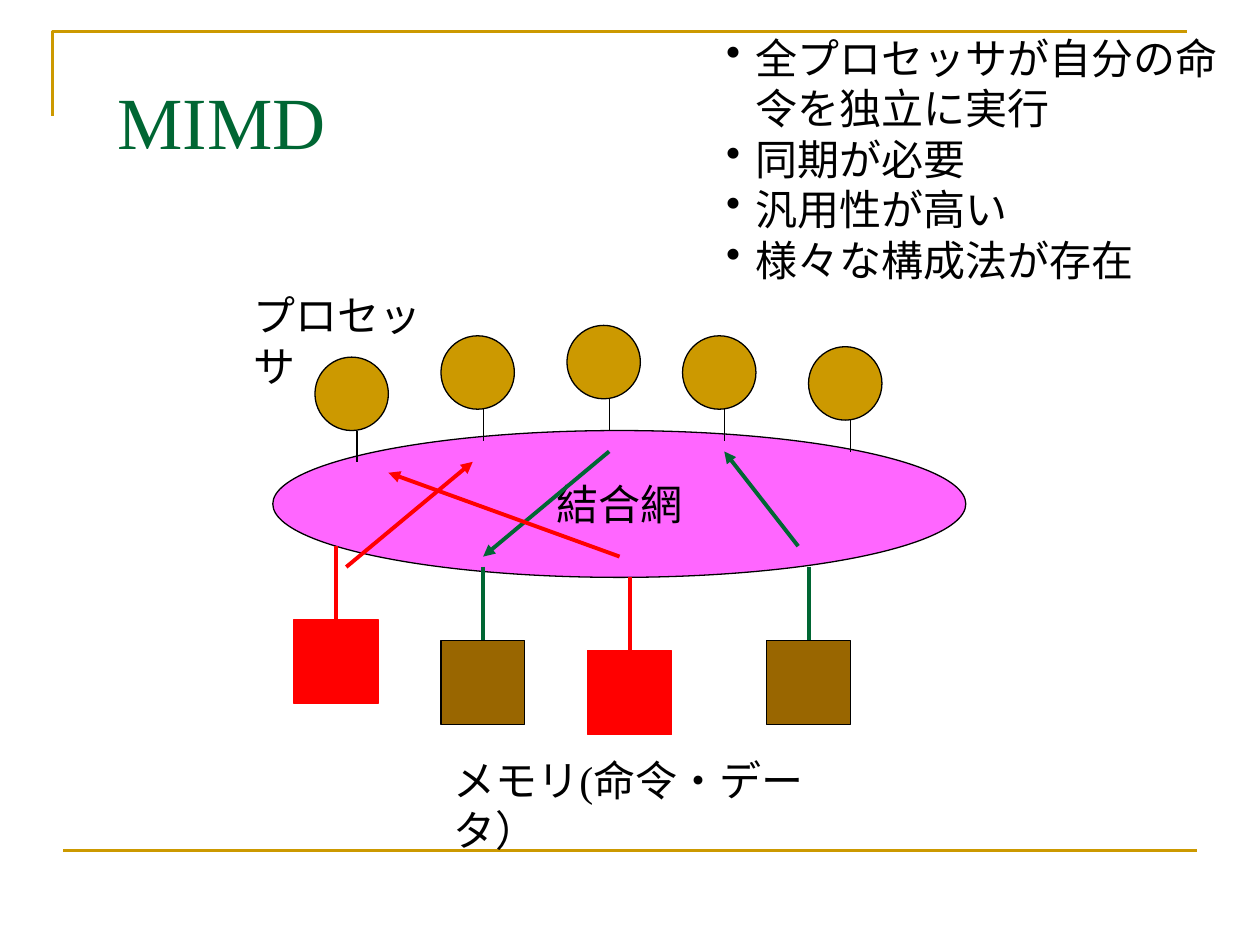
from pptx import Presentation
from pptx.dml.color import RGBColor
from pptx.enum.shapes import MSO_CONNECTOR, MSO_SHAPE
from pptx.enum.text import MSO_ANCHOR, PP_ALIGN
from pptx.oxml.ns import qn
from pptx.util import Cm, Pt

LINE = MSO_CONNECTOR.STRAIGHT
CIRCLE, SQUARE = MSO_SHAPE.OVAL, MSO_SHAPE.RECTANGLE
FONT = "Times New Roman"
BLACK, GOLD, GREEN = "000000", "CC9900", "006633"
RED, BROWN, PINK = "FF0000", "996600", "FF66FF"

# Content: text, then box as left, top, width, height (all lengths in cm)
TITLE = ("MIMD", (2.12, 1.24, 22.86, 3.18))
LABELS = [
    ("プロセッサ", (4.87, 5.72, 4.23, 1.27)),
    ("メモリ(命令・データ）", (8.89, 15.08, 7.62, 1.27)),
]
FEATURES = [
    "全プロセッサが自分の命令を独立に実行",
    "同期が必要",
    "汎用性が高い",
    "様々な構成法が存在",
]
FEATURES_BOX = (14.39, 0.53, 11.01, 6.35)
BULLET_INDENT = 0.6

NETWORK = ("結合網", (5.5, 8.68, 13.97, 2.96))

# Processors hang a stem down, memories raise one up: left, top
PROCESSORS = [(6.35, 7.2), (8.89, 6.77), (11.43, 6.56), (13.76, 6.77), (16.3, 6.99)]
PROCESSOR_SIZE, PROCESSOR_STEM = 1.48, 0.64
MEMORIES = [
    (5.93, 12.49, RED, RED, RED),  # fill, outline, stem
    (8.89, 12.91, BROWN, BLACK, GREEN),
    (11.85, 13.12, RED, RED, RED),
    (15.45, 12.91, BROWN, BLACK, GREEN),
]
MEMORY_SIZE, MEMORY_STEM = 1.69, 1.49
STEM_OFFSET = 0.85

TRANSFERS = [
    ((6.98, 11.43), (9.53, 9.31), RED),
    ((16.09, 11.01), (14.6, 9.1), GREEN),
    ((12.28, 9.1), (9.74, 11.22), GREEN),
    ((12.49, 11.22), (7.83, 9.53), RED),
]
CORNER = [(1.06, 2.33), (1.06, 0.64), (23.92, 0.64)]
FOOT_RULE = ((1.27, 17.15), (23.13 + 1, 17.15))

prs = Presentation()
prs.slide_width, prs.slide_height = Cm(25.4), Cm(19.05)
slide = prs.slides.add_slide(prs.slide_layouts[6])
shapes = slide.shapes


def rgb(color):
    return RGBColor.from_string(color)


def set_line(part, color, width):
    part.line.color.rgb = rgb(color)
    part.line.width = Pt(width)


def set_font(paragraph, size=24, color=BLACK):
    paragraph.font.name = FONT
    paragraph.font.size = Pt(size)
    paragraph.font.color.rgb = rgb(color)


def add_text(lines, box, size=24, color=BLACK):
    frame = shapes.add_textbox(*map(Cm, box)).text_frame
    frame.word_wrap = True
    frame.text = "\n".join(lines)
    for paragraph in frame.paragraphs:
        set_font(paragraph, size, color)
    return frame


def add_node(kind, box, fill, outline=BLACK):
    node = shapes.add_shape(kind, *map(Cm, box))
    node.shadow.inherit = False
    node.fill.solid()
    node.fill.fore_color.rgb = rgb(fill)
    set_line(node, outline, 0.75)
    return node


def add_line(start, end, color, width, arrow=False):
    line = shapes.add_connector(LINE, *map(Cm, start + end))
    set_line(line, color, width)
    properties = line._element.spPr
    if arrow:
        head = line.line._get_or_add_ln().makeelement(qn("a:tailEnd"), {"type": "triangle"})
        line.line._get_or_add_ln().append(head)
    properties.append(properties.makeelement(qn("a:effectLst"), {}))


# Frame lines
points = [(Cm(x), Cm(y)) for x, y in CORNER]
builder = shapes.build_freeform(*points[0])
builder.add_line_segments(points[1:], close=False)
corner = builder.convert_to_shape()
corner.shadow.inherit = False
corner.fill.background()
set_line(corner, GOLD, 1.5)
add_line(*FOOT_RULE, GOLD, 1.5)

# Title, labels and feature list
title = add_text([TITLE[0]], TITLE[1], 42, GREEN)
title.margin_top = Cm(0.3)
for label, box in LABELS:
    add_text([label], box)
for paragraph in add_text(FEATURES, FEATURES_BOX).paragraphs:
    properties = paragraph._p.get_or_add_pPr()
    properties.set("marL", str(Cm(BULLET_INDENT)))
    properties.set("indent", str(-Cm(BULLET_INDENT)))
    bullet = properties.makeelement(qn("a:buChar"), {"char": "•"})
    properties.append(bullet)

# Interconnection network
network = add_node(CIRCLE, NETWORK[1], PINK).text_frame
network.text = NETWORK[0]
network.word_wrap = False
network.vertical_anchor = MSO_ANCHOR.MIDDLE
network.paragraphs[0].alignment = PP_ALIGN.CENTER
set_font(network.paragraphs[0])

# Processors above, memories below
for left, top in PROCESSORS:
    add_node(CIRCLE, (left, top, PROCESSOR_SIZE, PROCESSOR_SIZE), GOLD)
    x, bottom = left + STEM_OFFSET, top + PROCESSOR_SIZE
    add_line((x, bottom), (x, bottom + PROCESSOR_STEM), BLACK, 0.75)
for left, top, fill, outline, stem in MEMORIES:
    add_node(SQUARE, (left, top, MEMORY_SIZE, MEMORY_SIZE), fill, outline)
    x = left + STEM_OFFSET
    add_line((x, top - MEMORY_STEM), (x, top), stem, 2.25)

# Transfers through the network
for start, end, color in TRANSFERS:
    add_line(start, end, color, 2.25, arrow=True)

prs.save("out.pptx")
